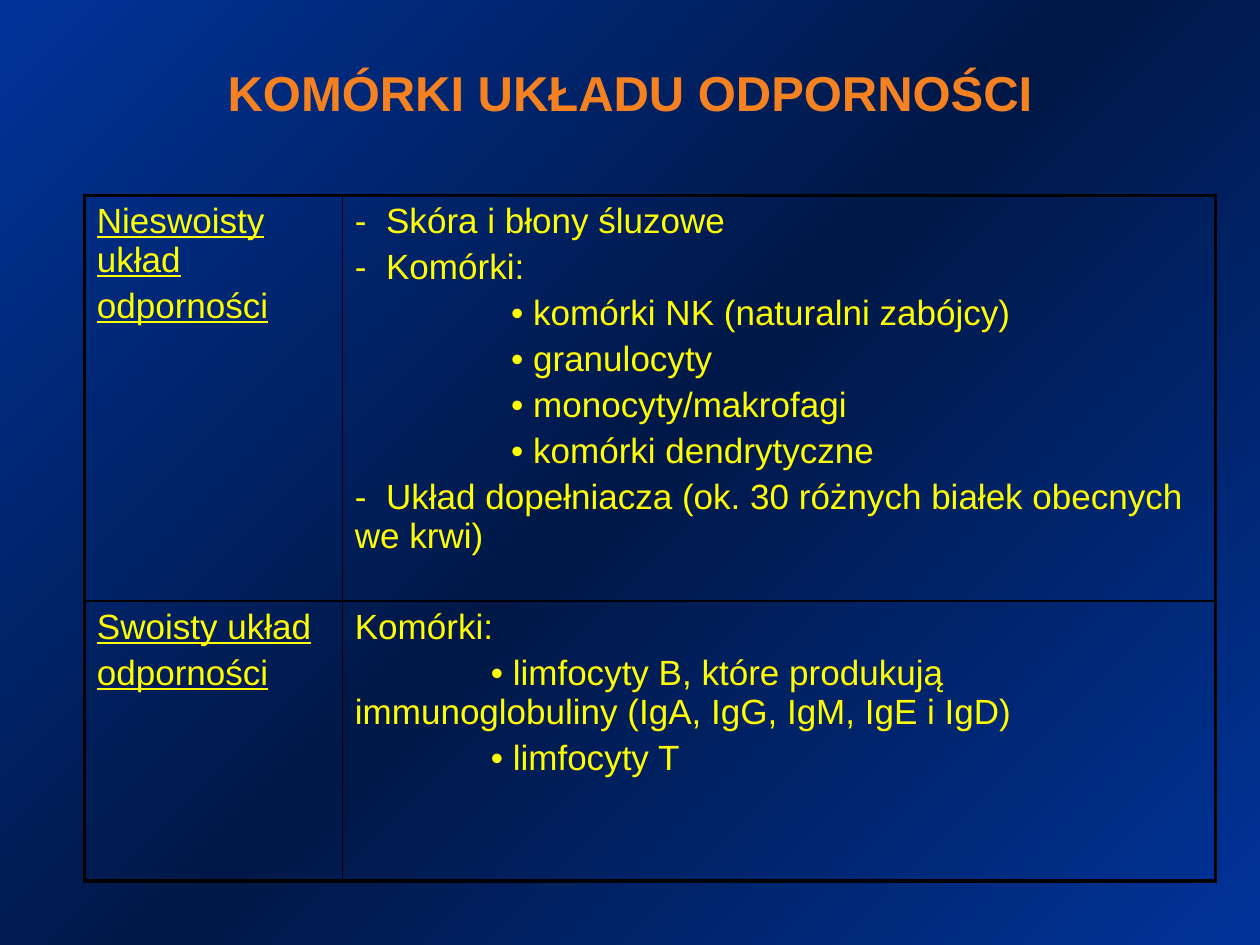
"""Build a slide with a table of the cells of the immune system."""
from copy import deepcopy

from pptx import Presentation
from pptx.dml.color import RGBColor as RGB
from pptx.enum.text import MSO_ANCHOR as Anchor, PP_ALIGN as Align
from pptx.oxml.ns import qn
from pptx.oxml.xmlchemy import OxmlElement as Element
from pptx.util import Cm, Pt

COLORS = {"blue": "003399", "navy": "001847", "title": "F58121", "text": "FFFF00", "border": "000000"}
FONT = "Arial"
TITLE = "KOMÓRKI UKŁADU ODPORNOŚCI"
ROWS = [
    {
        "height": 8.18,
        "indent": 3.15,
        "label": ["Nieswoisty układ", "odporności"],
        "items": [
            "-\tSkóra i błony śluzowe",
            "-\tKomórki:",
            "• komórki NK (naturalni zabójcy)",
            "• granulocyty",
            "• monocyty/makrofagi",
            "• komórki dendrytyczne",
            "-\tUkład dopełniacza (ok. 30 różnych białek obecnych we krwi)",
        ],
    },
    {
        "height": 5.64,
        "indent": 2.74,
        "label": ["Swoisty układ", "odporności"],
        "items": [
            "Komórki:",
            "• limfocyty B, które produkują immunoglobuliny (IgA, IgG, IgM, IgE i IgD)",
            "• limfocyty T",
        ],
    },
]
COLUMNS = [5.2, 17.6]
TABLE_LEFT, TABLE_TOP = 1.7, 3.94
DASH_TAB = 0.63
OUTER, INNER = 2.25, 1


def set_font(p, size, color, **style):
    p.font.name = FONT
    p.font.size = Pt(size)
    p.font.color.rgb = RGB.from_string(COLORS[color])
    for name, value in style.items():
        setattr(p.font, name, value)


def set_background(s):
    fill = s.background.fill
    fill.gradient()
    fill.gradient_angle = 315
    stops = s.element.find(".//" + qn("a:gsLst"))
    stops.append(deepcopy(stops[0]))
    for stop, position, color in zip(fill.gradient_stops, (0, 0.5, 1), ("blue", "navy", "blue")):
        stop.position = position
        stop.color.rgb = RGB.from_string(COLORS[color])


def add_title(s):
    sp = s.shapes.add_textbox(Cm(1.27), Cm(0.64), Cm(22.86), Cm(2.41))
    tf = sp.text_frame
    tf.word_wrap = True
    tf.vertical_anchor = Anchor.MIDDLE
    p = tf.paragraphs[0]
    p.text = TITLE
    p.alignment = Align.CENTER
    set_font(p, 28, "title", bold=True)


def set_borders(cell, widths):
    tc_pr = cell._tc.get_or_add_tcPr()
    for i, (side, width) in enumerate(zip(("a:lnL", "a:lnR", "a:lnT", "a:lnB"), widths)):
        line = Element(side)
        line.set("w", str(Pt(width)))
        fill, color = Element("a:solidFill"), Element("a:srgbClr")
        color.set("val", COLORS["border"])
        fill.append(color)
        line.append(fill)
        tc_pr.insert(i, line)


def set_first_line(p, text, indent):
    p_pr = p._p.get_or_add_pPr()
    if text.startswith("•"):
        p_pr.set("marL", "0")
        p_pr.set("indent", str(Cm(indent)))
    elif "\t" in text:
        tabs, tab = Element("a:tabLst"), Element("a:tab")
        tab.set("pos", str(Cm(DASH_TAB)))
        tab.set("algn", "l")
        tabs.append(tab)
        p_pr.append(tabs)


def fill_cell(cell, lines, indent, underline):
    cell.fill.background()
    tf = cell.text_frame
    for i, text in enumerate(lines):
        p = tf.add_paragraph() if i else tf.paragraphs[0]
        p.text = text
        p.space_before = Pt(4)
        set_first_line(p, text, indent)
        set_font(p, 20, "text", underline=underline)


def add_cell_table(s):
    n_rows, n_cols = len(ROWS), len(COLUMNS)
    height = sum(row["height"] for row in ROWS)
    sp = s.shapes.add_table(n_rows, n_cols, Cm(TABLE_LEFT), Cm(TABLE_TOP), Cm(sum(COLUMNS)), Cm(height))
    table = sp.table
    table.first_row = table.horz_banding = False
    for column, width in zip(table.columns, COLUMNS):
        column.width = Cm(width)
    for r, row in enumerate(ROWS):
        table.rows[r].height = Cm(row["height"])
        for c, key in enumerate(("label", "items")):
            cell = table.cell(r, c)
            fill_cell(cell, row[key], row["indent"], key == "label")
            edges = (c == 0, c == n_cols - 1, r == 0, r == n_rows - 1)
            set_borders(cell, [OUTER if edge else INNER for edge in edges])


def main():
    prs = Presentation()
    prs.slide_width, prs.slide_height = Cm(25.4), Cm(19.05)
    s = prs.slides.add_slide(prs.slide_layouts[6])
    set_background(s)
    add_title(s)
    add_cell_table(s)
    prs.save("out.pptx")


if __name__ == "__main__":
    main()
